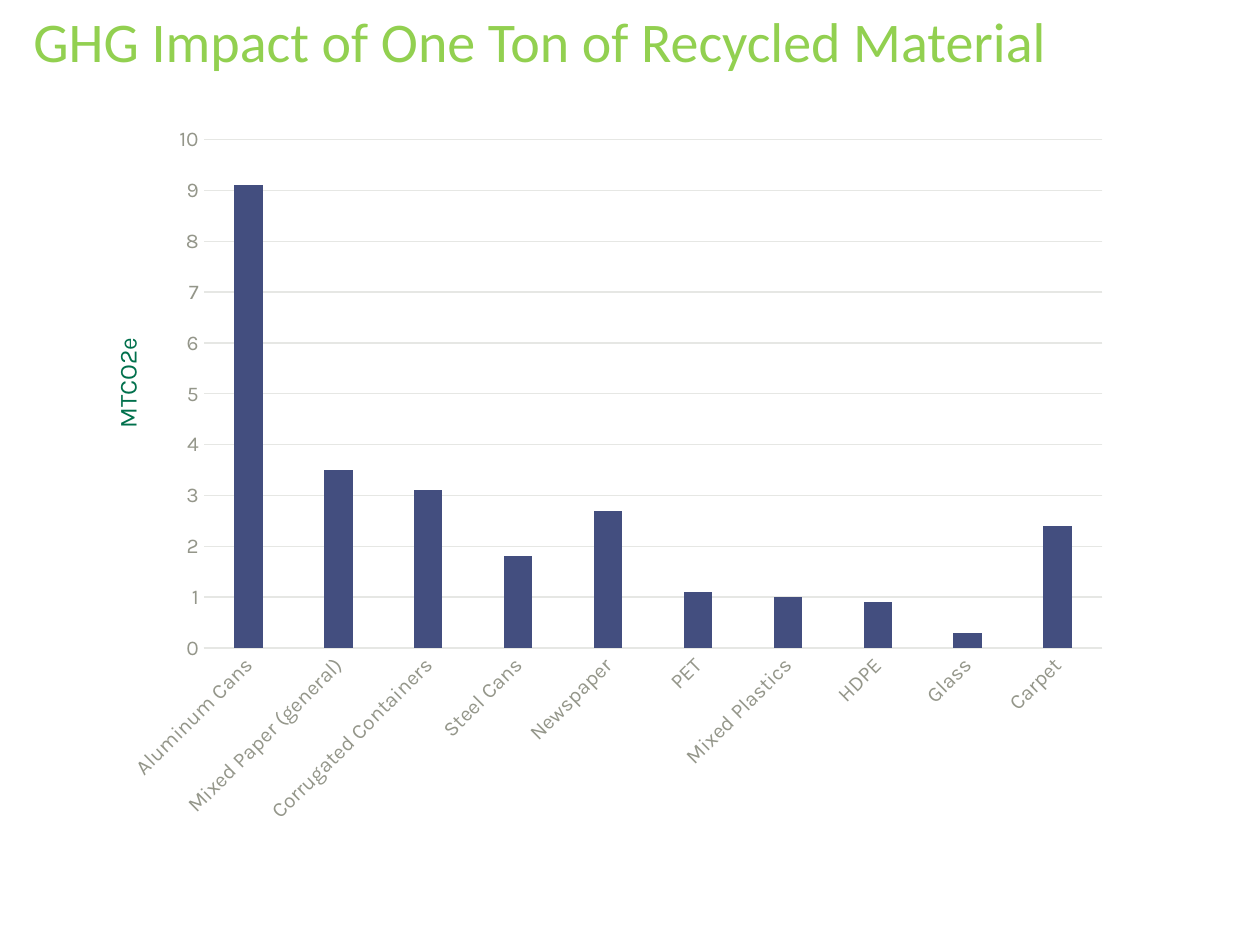
from dataclasses import dataclass

from lxml import etree
from pptx import Presentation
from pptx import util as u
from pptx.chart.data import CategoryChartData
from pptx.dml.color import RGBColor
from pptx.enum import chart as ch
from pptx.enum import text as t
from pptx.oxml import parse_xml
from pptx.oxml.ns import nsdecls

GREEN = RGBColor(0x92, 0xD0, 0x50)
DARK_GREEN = RGBColor(0x00, 0x70, 0x4C)
NAVY = RGBColor(0x43, 0x4E, 0x7F)
GRAY = RGBColor(0x94, 0x96, 0x8A)
DARK_GRAY = RGBColor(0x57, 0x58, 0x4F)
LIGHT_GRAY = RGBColor(0xE6, 0xE7, 0xE4)
FONT = "Karla"


@dataclass(frozen=True)
class Box:
    left: float
    top: float
    width: float
    height: float

    def lengths(self) -> tuple:
        return tuple(u.Pt(v) for v in (self.left, self.top, self.width, self.height))


@dataclass(frozen=True)
class Material:
    name: str
    impact: float


MATERIALS = [
    Material("Aluminum Cans", 9.1),
    Material("Mixed Paper (general)", 3.5),
    Material("Corrugated Containers", 3.1),
    Material("Steel Cans", 1.8),
    Material("Newspaper", 2.7),
    Material("PET", 1.1),
    Material("Mixed Plastics", 1),
    Material("HDPE", 0.9),
    Material("Glass", 0.3),
    Material("Carpet", 2.4),
]


def style_font(font, size: float, color: RGBColor, name: str = FONT) -> None:
    font.size = u.Pt(size)
    font.name = name
    font.bold = False
    font.color.rgb = color


def add_text(s, box: Box, text: str, *, size: float, color: RGBColor,
             name: str = FONT, align=t.PP_ALIGN.LEFT, spacing: float = 1.0,
             rotation: float = 0, inset: tuple = (7.2, 3.6)) -> None:
    sp = s.shapes.add_textbox(*box.lengths())
    sp.rotation = rotation
    tf = sp.text_frame
    tf.word_wrap = True
    tf.margin_left = tf.margin_right = u.Pt(inset[0])
    tf.margin_top = tf.margin_bottom = u.Pt(inset[1])
    p = tf.paragraphs[0]
    p.alignment = align
    p.line_spacing = spacing
    r = p.add_run()
    r.text = text
    style_font(r.font, size, color, name)


def style_line(line) -> None:
    line.color.rgb = LIGHT_GRAY
    line.width = u.Pt(0.75)


def set_plot_layout(chart, x: float, y: float, w: float, h: float) -> None:
    area = chart.plots[0]._element.getparent()
    for old in area.findall("{*}layout"):
        area.remove(old)
    layout = parse_xml(f"<c:layout {nsdecls('c')}><c:manualLayout/></c:layout>")
    settings = {"layoutTarget": "inner", "xMode": "edge", "yMode": "edge",
                "x": x, "y": y, "w": w, "h": h}
    for tag, val in settings.items():
        ns = etree.QName(layout).namespace
        etree.SubElement(layout[0], f"{{{ns}}}{tag}").set("val", str(val))
    area.insert(0, layout)


def add_impact_chart(s, box: Box, materials: list[Material]) -> None:
    data = CategoryChartData()
    data.categories = [m.name for m in materials]
    data.add_series("Series 1", [m.impact for m in materials])
    chart = s.shapes.add_chart(ch.XL_CHART_TYPE.COLUMN_CLUSTERED, *box.lengths(), data).chart
    chart.has_legend = False
    chart.has_title = False
    style_font(chart.font, 10, DARK_GRAY)

    plot = chart.plots[0]
    plot.vary_by_categories = False
    plot.gap_width = 219
    plot.overlap = -27
    fill = plot.series[0].format.fill
    fill.solid()
    fill.fore_color.rgb = NAVY

    cat, val = chart.category_axis, chart.value_axis
    for axis in (cat, val):
        axis.major_tick_mark = axis.minor_tick_mark = ch.XL_TICK_MARK.NONE
        style_font(axis.tick_labels.font, 12, GRAY)
    style_line(cat.format.line)
    cat._element.txPr.bodyPr.set("rot", str(-45 * 60000))
    val.minimum_scale, val.maximum_scale, val.major_unit = 0, 10, 1
    val.format.line.fill.background()
    val.has_major_gridlines = True
    style_line(val.major_gridlines.format.line)
    set_plot_layout(chart, 0.074, 0.047, 0.856, 0.691)


def main() -> None:
    prs = Presentation()
    prs.slide_width, prs.slide_height = u.Pt(720), u.Pt(540)
    s = prs.slides.add_slide(prs.slide_layouts[6])
    add_impact_chart(s, Box(72, 60, 600, 420.5), MATERIALS)
    add_text(s, Box(12, 0, 708, 46), "GHG Impact of One Ton of Recycled Material",
             size=32, color=GREEN, name="Calibri")
    add_text(s, Box(39, 204, 84, 30), "MTCO2e", size=14, color=DARK_GREEN,
             align=t.PP_ALIGN.CENTER, spacing=0.9, rotation=270, inset=(0, 0))
    prs.save("out.pptx")


if __name__ == "__main__":
    main()
